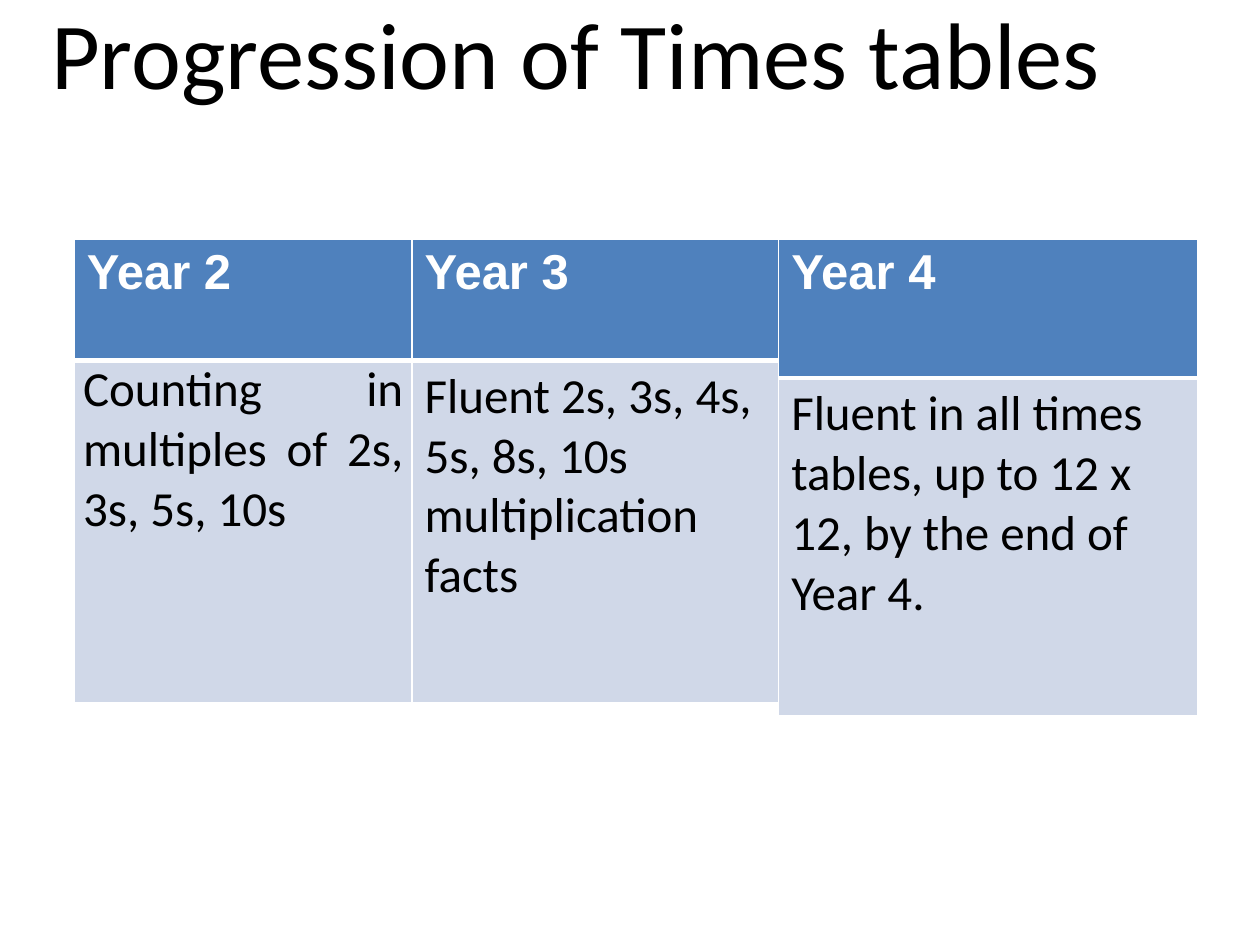
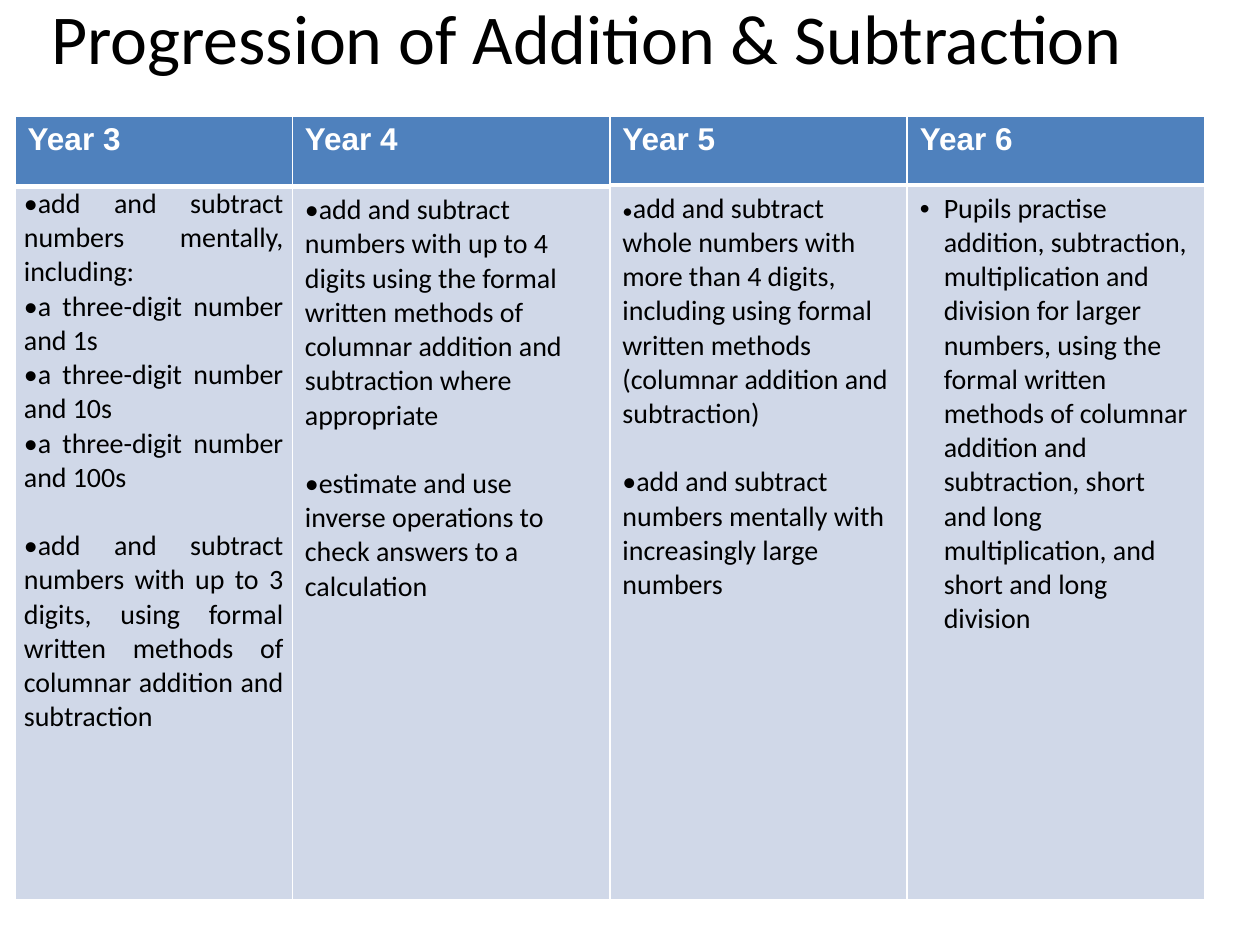
from lxml import etree
from pptx import Presentation
from pptx.dml.color import RGBColor
from pptx.enum.text import MSO_AUTO_SIZE, PP_ALIGN
from pptx.oxml.ns import qn
from pptx.util import Inches, Pt

CENTER, JUSTIFY, LEFT = PP_ALIGN.CENTER, PP_ALIGN.JUSTIFY, PP_ALIGN.LEFT
FIT_SHAPE = MSO_AUTO_SIZE.SHAPE_TO_FIT_TEXT
WIDTH, HEIGHT = Inches(10), Inches(7.5)
COLUMN, ROW = WIDTH / 100, HEIGHT / 100
BLACK, WHITE, HEADER_BLUE, BODY_BLUE = "000000", "FFFFFF", "4F81BD", "D0D8E8"
HEADING_FONT, BODY_FONT = "Arial", "Calibri"
THIN, THICK = 1, 3
TITLE_BOX = (2.6, -1.2, 87.9)
TIGHT_INSETS = (0.07, 0)
HANGING = Inches(0.19)
GAP = 19.5


def color(hex_string):
    return RGBColor.from_string(hex_string)


def columns(count):
    return round(count * COLUMN)


def rows(count):
    return round(count * ROW)


def write(paragraph, text, size, font=BODY_FONT, ink=BLACK, bold=False,
          align=LEFT, before=0, bullet_size=None, hanging=False):
    paragraph.alignment = align
    if before:
        paragraph.space_before = Pt(before)
    if hanging:
        properties = paragraph._p.get_or_add_pPr()
        properties.set("marL", str(HANGING))
        properties.set("indent", str(-HANGING))
        etree.SubElement(properties, qn("a:buFont"), typeface=HEADING_FONT)
        etree.SubElement(properties, qn("a:buChar"), char="•")
    parts = [(text, size)]
    if bullet_size:
        parts = [(text[0], bullet_size), (text[1:], size)]
    for words, points in parts:
        run = paragraph.add_run()
        run.text = words
        run.font.name, run.font.size, run.font.bold = font, Pt(points), bold
        run.font.color.rgb = color(ink)


def add_title(slide, text, size, height):
    left, top, width = TITLE_BOX
    title = slide.shapes.add_textbox(columns(left), rows(top), columns(width), rows(height))
    title.text_frame.word_wrap = False
    title.text_frame.auto_size = FIT_SHAPE
    write(title.text_frame.paragraphs[0], text, size, align=CENTER)


def style_cell(cell, fill, top=THIN, bottom=THIN):
    properties = cell._tc.get_or_add_tcPr()
    for side, points in (("L", THIN), ("R", THIN), ("T", top), ("B", bottom)):
        edge = etree.SubElement(properties, qn("a:ln" + side), w=str(Pt(points)))
        edge_fill = etree.SubElement(edge, qn("a:solidFill"))
        etree.SubElement(edge_fill, qn("a:srgbClr"), val=WHITE)
    cell.fill.solid()
    cell.fill.fore_color.rgb = color(fill)


def add_year_table(slide, box, heading_size, body_size, years):
    left, top, heights = box
    widths = [year["width"] for year in years]
    table = slide.shapes.add_table(2, len(years), columns(left), rows(top),
                                   columns(sum(widths)), rows(sum(heights))).table
    table.first_row = table.horz_banding = False
    for table_row, height in zip(table.rows, heights):
        table_row.height = rows(height)
    for index, year in enumerate(years):
        table.columns[index].width = columns(year["width"])
        heading, body = table.cell(0, index), table.cell(1, index)
        style_cell(heading, HEADER_BLUE, bottom=THICK)
        style_cell(body, BODY_BLUE, top=THICK)
        write(heading.text_frame.paragraphs[0], year["name"], heading_size,
              font=HEADING_FONT, ink=WHITE, bold=True)
        justified = year.get("justified", False)
        if justified:
            side, edge = map(Inches, TIGHT_INSETS)
            body.margin_left = body.margin_right = side
            body.margin_top = body.margin_bottom = edge
        for number, (text, options) in enumerate(year["goals"]):
            frame = body.text_frame
            paragraph = frame.add_paragraph() if number else frame.paragraphs[0]
            write(paragraph, text, body_size,
                  align=JUSTIFY if justified else LEFT, **options)


def goal(text, **options):
    return text, options


def add_times_tables(slide):
    add_title(slide, "Progression of Times tables ", 54, 13.47)
    add_year_table(slide, (5.9, 25.33, (12.8, 36.2)), 28, 28, [
        {"name": "Year 2", "width": 26.8, "justified": True, "goals": [
            goal("Counting in multiples of 2s, 3s, 5s, 10s")]},
        {"name": "Year 3", "width": 29.1, "goals": [
            goal("Fluent 2s, 3s, 4s, 5s, 8s, 10s multiplication facts")]},
    ])
    add_year_table(slide, (61.8, 25.33, (14.67, 35.73)), 28, 28, [
        {"name": "Year 4", "width": 33.3, "goals": [
            goal("Fluent in all times tables, up to 12 x 12, by the end of Year 4.")]},
    ])


def add_addition_subtraction(slide):
    add_title(slide, "Progression of Addition & Subtraction", 40, 10.27)
    top, heights = 12.27, (7.33, 75.6)
    add_year_table(slide, (1.2, top, (7.5, 75.4)), 18, 16, [
        {"name": "Year 3", "width": 22, "justified": True, "goals": [
            goal("•add and subtract numbers mentally, including: "),
            goal("•a three-digit number and 1s"),
            goal("•a three-digit number and 10s"),
            goal("•a three-digit number and 100s"),
            goal("•add and subtract numbers with up to 3 digits, using formal "
                 "written methods of columnar addition and subtraction", before=GAP)]},
        {"name": "Year 4", "width": 25.2, "goals": [
            goal("•add and subtract numbers with up to 4 digits using the formal written "
                 "methods of columnar addition and subtraction where appropriate"),
            goal("•estimate and use inverse operations to check answers to a calculation",
                 before=GAP)]},
    ])
    upper_years = [
        {"name": "Year 5", "width": 23.6, "goals": [
            goal("•add and subtract whole numbers with more than 4 digits, including using "
                 "formal written methods (columnar addition and subtraction)", bullet_size=12),
            goal("•add and subtract numbers mentally with increasingly large numbers",
                 before=GAP)]},
        {"name": "Year 6", "width": 23.6, "goals": [
            goal("Pupils practise addition, subtraction, multiplication and division for "
                 "larger numbers, using the formal written methods of columnar addition and "
                 "subtraction, short and long multiplication, and short and long division",
                 hanging=True)]},
    ]
    for index, year in enumerate(upper_years):
        add_year_table(slide, (48.4 + index * year["width"], top, heights), 18, 16, [year])


def main():
    presentation = Presentation()
    presentation.slide_width, presentation.slide_height = WIDTH, HEIGHT
    blank = presentation.slide_layouts[6]
    for add_content in (add_times_tables, add_addition_subtraction):
        add_content(presentation.slides.add_slide(blank))
    presentation.save("out.pptx")


if __name__ == "__main__":
    main()
